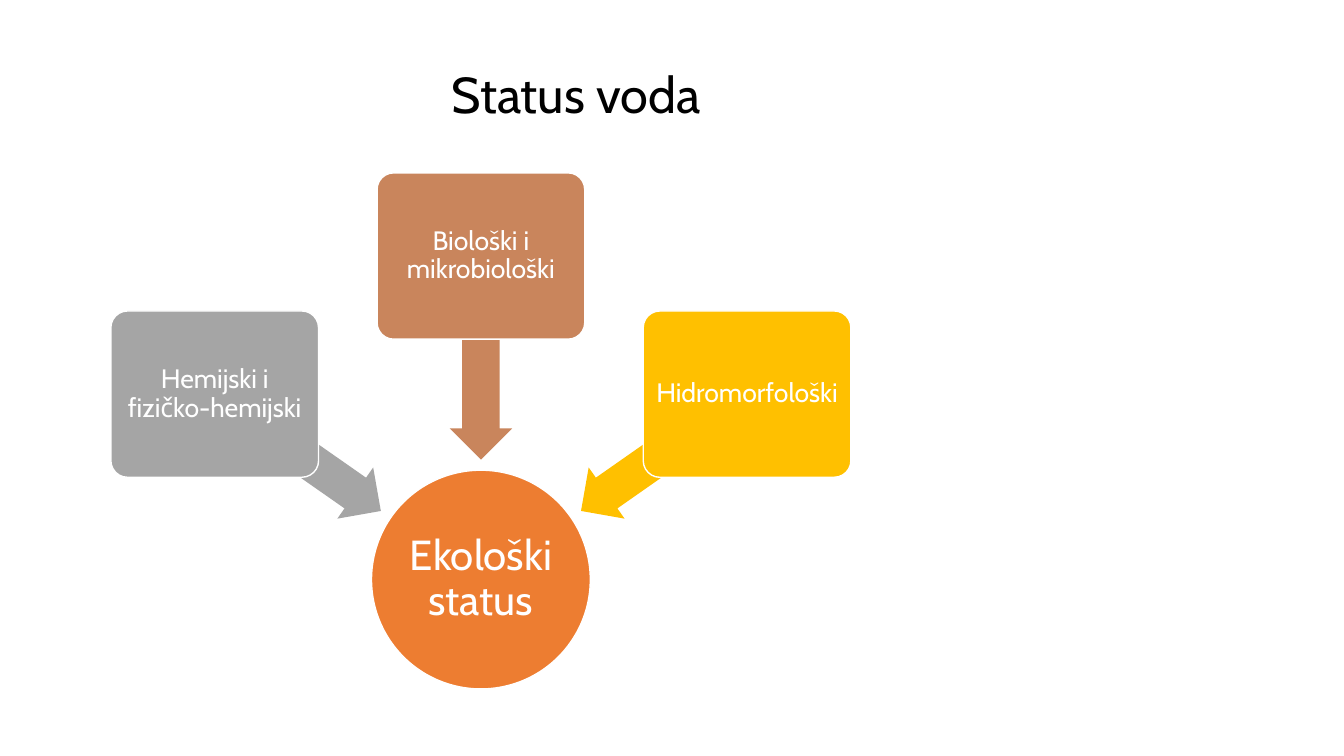
from pptx import Presentation
from pptx import util as u
from pptx.dml.color import RGBColor
from pptx.enum import shapes, text

WHITE, BLACK, ORANGE = "FFFFFF", "000000", "ED7D31"
GREY, BROWN, YELLOW = "A5A5A5", "C9855C", "FFC000"
SHAPE = shapes.MSO_SHAPE


def color(value):
    return RGBColor.from_string(value)


class StatusSlide:
    font = "Cabin"

    def __init__(self, prs):
        self.slide = prs.slides.add_slide(prs.slide_layouts[6])

    def label(self, sp, words, size, ink, inset, align):
        tf = sp.text_frame
        frame = dict(word_wrap=True, vertical_anchor=text.MSO_ANCHOR.MIDDLE)
        for side in ("left", "right", "top", "bottom"):
            frame["margin_" + side] = u.Inches(inset)
        for name, value in frame.items():
            setattr(tf, name, value)
        p = tf.paragraphs[0]
        for name, value in dict(alignment=align, line_spacing=0.9).items():
            setattr(p, name, value)
        r = p.add_run()
        r.text = words
        for name, value in dict(name=self.font, size=u.Pt(size)).items():
            setattr(r.font, name, value)
        r.font.color.rgb = color(ink)

    def title(self, words, left, top, width, height):
        sp = self.slide.shapes.add_textbox(*map(u.Inches, (left, top, width, height)))
        self.label(sp, words, 36, BLACK, 0.1, text.PP_ALIGN.LEFT)

    def centred(self, kind, cx, cy, width, height, fill):
        """Add a filled shape around its centre point."""
        box = (cx - width / 2, cy - height / 2, width, height)
        sp = self.slide.shapes.add_shape(kind, *map(u.Inches, box))
        sp.shadow.inherit = False
        sp.fill.solid()
        sp.fill.fore_color.rgb = color(fill)
        sp.line.fill.background()
        return sp

    def outline(self, sp):
        sp.line.color.rgb = color(WHITE)
        sp.line.width = u.Pt(1)

    def hub(self, words, cx, cy, diameter):
        sp = self.centred(SHAPE.OVAL, cx, cy, diameter, diameter, ORANGE)
        self.outline(sp)
        self.label(sp, words, 30, WHITE, 0.02, text.PP_ALIGN.CENTER)

    def card(self, words, cx, cy, fill):
        sp = self.centred(SHAPE.ROUNDED_RECTANGLE, cx, cy, 2.06, 1.65, fill)
        sp.adjustments[0] = 0.1
        self.outline(sp)
        self.label(sp, words, 19, WHITE, 0.04, text.PP_ALIGN.CENTER)

    def arrow(self, cx, cy, rotation, fill):
        sp = self.centred(SHAPE.LEFT_ARROW, cx, cy, 2.02, 0.62, fill)
        sp.adjustments[0], sp.adjustments[1] = 0.6, 0.5
        sp.rotation = rotation


def main():
    prs = Presentation()
    prs.slide_width, prs.slide_height = u.Inches(13.33), u.Inches(7.5)
    s = StatusSlide(prs)
    s.title("Status voda", 4.38, 0.45, 8.27, 1.02)

    hub_x, card_step, arrow_step = 4.77, 2.64, 1.82
    s.hub("Ekološki status", hub_x, 5.75, 2.17)
    # side (-1 left, 0 middle, 1 right), words, card y, arrow y, fill
    factors = [
        (-1, "Hemijski i fizičko-hemijski", 3.91, 4.49, GREY),
        (0, "Biološki i mikrobiološki", 2.54, 3.55, BROWN),
        (1, "Hidromorfološki", 3.91, 4.49, YELLOW),
    ]
    for side, words, card_y, arrow_y, fill in factors:
        s.arrow(hub_x + side * arrow_step, arrow_y, 270 + 55 * side, fill)
        s.card(words, hub_x + side * card_step, card_y, fill)
    prs.save("out.pptx")


if __name__ == "__main__":
    main()
